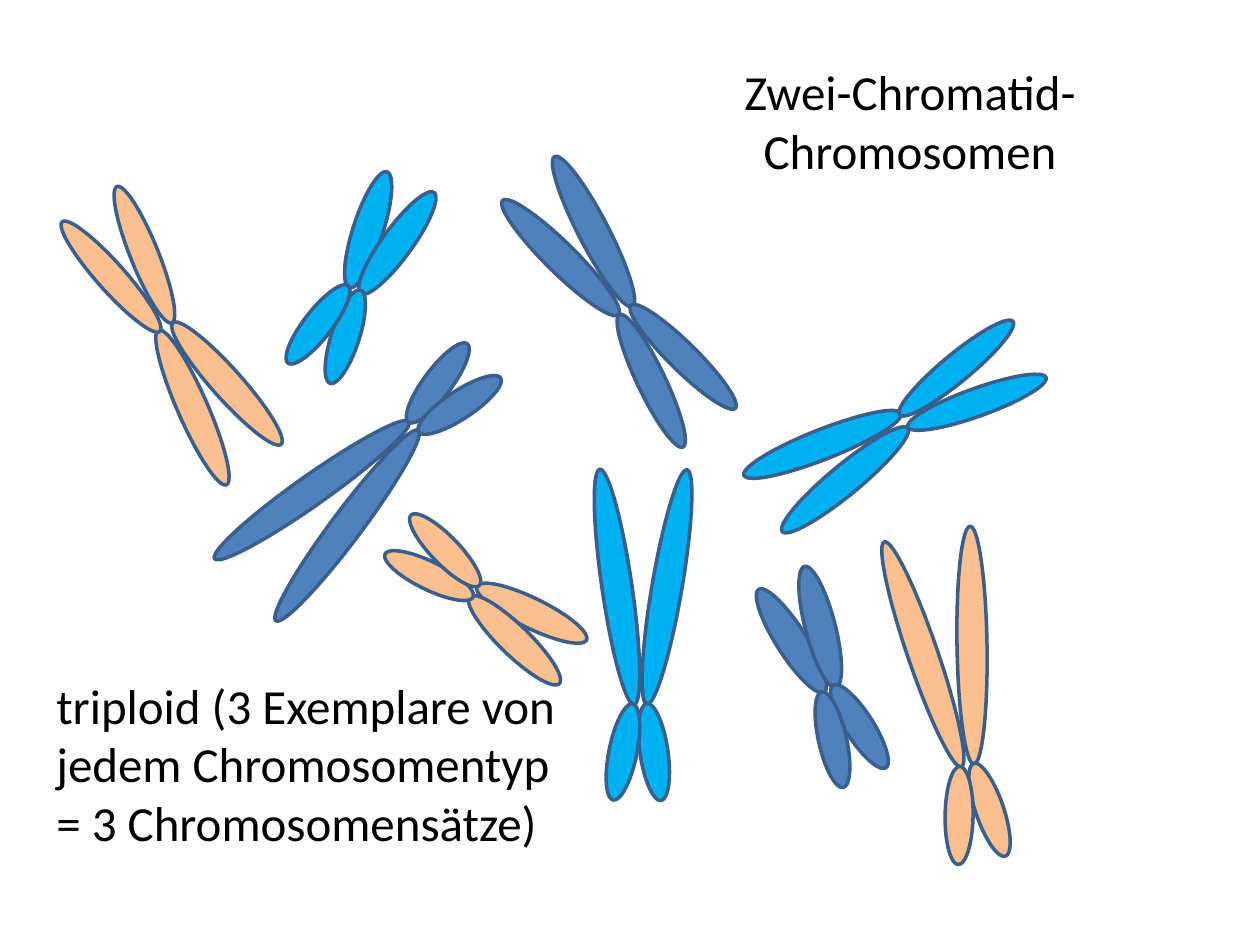
import math

import pptx
import pptx.dml.color
import pptx.enum.shapes
import pptx.enum.text
import pptx.util

PIXEL = 914400 / 126
OUTLINE = "3A5F8C"
BLUE, CYAN, ORANGE = "4F81BD", "00B0F0", "FAC090"

# Tilts of the upper left, upper right, lower right and lower left arm
TILTS = (-8.3, 9.7, -8.3, 11.5)
# Per arm: centre relative to the centromere, then width and height
LONG = ((-24, -117, 30, 238), (26, -117, 30, 238), (13, 48, 28, 98), (-18, 48, 28, 98))
MEDIUM = ((-22, -81, 30, 163), (20, -82, 30, 169), (16, 72, 28, 147), (-24, 72, 28, 147))
SHORT = ((-14, -58, 30, 122), (18, -59, 30, 125), (13, 48, 28, 98), (-17, 49, 28, 98))

# Arms, colour, centromere x and y, rotation in degrees
CHROMOSOMES = (
    (LONG, BLUE, 413, 426, 225.1),
    (LONG, CYAN, 641, 704, 0),
    (SHORT, BLUE, 828, 688, -24.2),
    (SHORT, CYAN, 355, 288, 26.3),
    (MEDIUM, BLUE, 627, 309, -37.1),
    (MEDIUM, CYAN, 903, 419, -121.2),
    (LONG, ORANGE, 968, 765, -10.6),
    (SHORT, ORANGE, 476, 592, 124.4),
    (MEDIUM, ORANGE, 164, 328, 146.6),
)


def px(value):
    return pptx.util.Emu(round(value * PIXEL))


def rgb(value):
    return pptx.dml.color.RGBColor.from_string(value)


def add_chromosome(slide, arms, colour, x, y, rotation):
    """Group four arms around the centromere at x, y."""
    group = slide.shapes.add_group_shape()
    cosine = math.cos(math.radians(rotation))
    sine = math.sin(math.radians(rotation))
    for (dx, dy, width, height), tilt in zip(arms, TILTS):
        left = x + dx * cosine - dy * sine - width / 2
        top = y + dx * sine + dy * cosine - height / 2
        arm = group.shapes.add_shape(
            pptx.enum.shapes.MSO_SHAPE.OVAL, px(left), px(top), px(width), px(height))
        arm.rotation = (rotation + tilt) % 360
        arm.shadow.inherit = False
        arm.fill.solid()
        arm.fill.fore_color.rgb = rgb(colour)
        arm.line.color.rgb = rgb(OUTLINE)
        arm.line.width = pptx.util.Pt(2)


def format_text(shape, text, alignment):
    frame = shape.text_frame
    frame.text = text
    frame.word_wrap = True
    frame.auto_size = pptx.enum.text.MSO_AUTO_SIZE.NONE
    frame.vertical_anchor = pptx.enum.text.MSO_ANCHOR.TOP
    for paragraph in frame.paragraphs:
        paragraph.alignment = alignment
        for run in paragraph.runs:
            run.font.name = "Calibri"
            run.font.size = pptx.util.Pt(28)
            run.font.color.rgb = rgb("000000")


def add_title(slide, left, top, width, height):
    title = slide.shapes.title
    title.left, title.top = px(left), px(top)
    title.width, title.height = px(width), px(height)
    format_text(title, "Zwei-Chromatid-Chromosomen", pptx.enum.text.PP_ALIGN.CENTER)


def add_explanation(slide, left, top, width, height):
    box = slide.shapes.add_textbox(px(left), px(top), px(width), px(height))
    format_text(
        box,
        "triploid (3 Exemplare von jedem Chromosomentyp\n= 3 Chromosomensätze)",
        pptx.enum.text.PP_ALIGN.LEFT)


def main():
    presentation = pptx.Presentation()
    presentation.slide_width = px(1260)
    presentation.slide_height = px(945)
    slide = presentation.slides.add_slide(presentation.slide_layouts[5])
    for chromosome in CHROMOSOMES:
        add_chromosome(slide, *chromosome)
    add_title(slide, 674, 55, 472, 131)
    add_explanation(slide, 44, 669, 593, 190)
    presentation.save("out.pptx")


if __name__ == "__main__":
    main()
